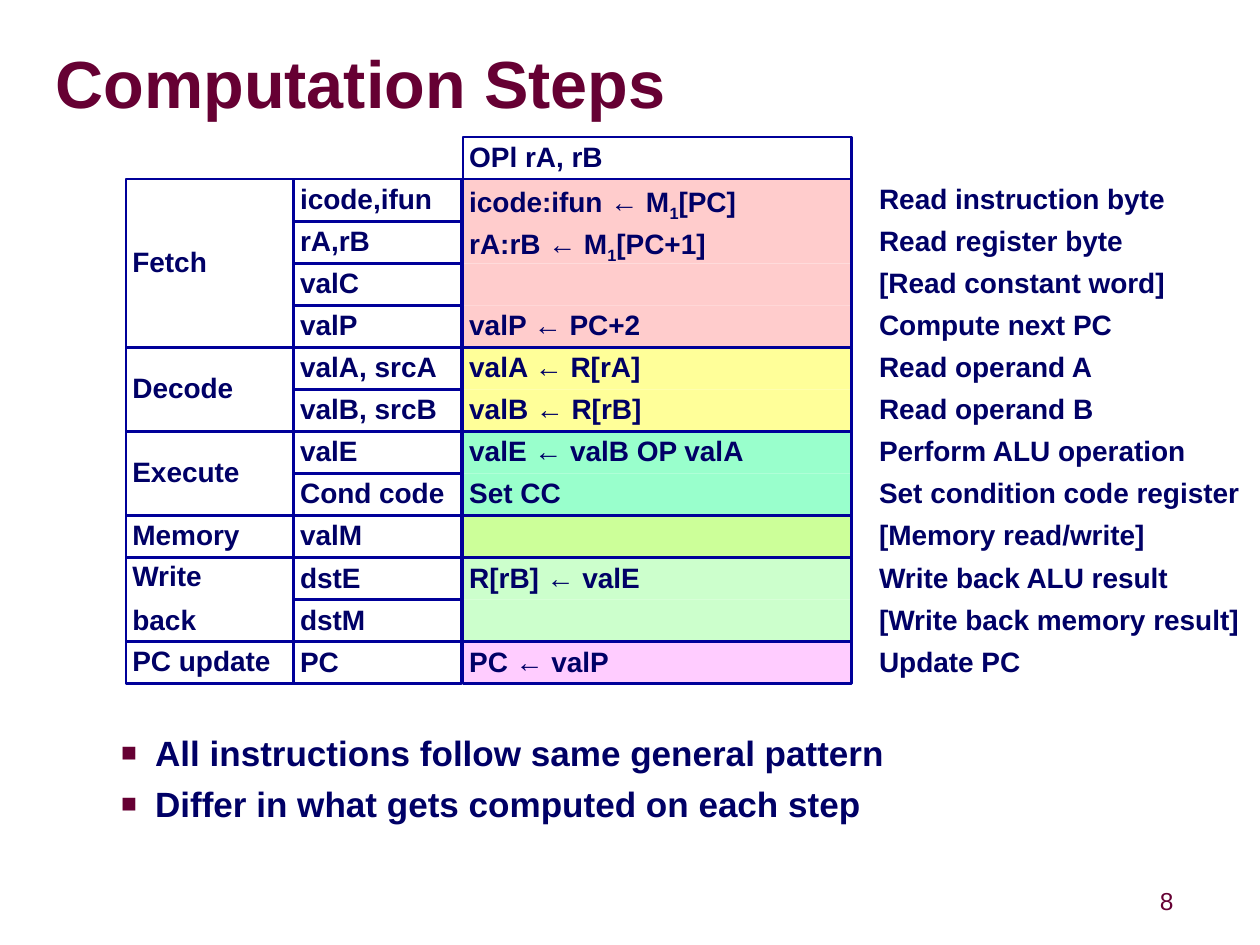
"""Build the slide that lists the computation steps of an OPl instruction."""
from lxml import etree
from pptx import Presentation
from pptx.dml.color import RGBColor
from pptx.enum.shapes import MSO_SHAPE
from pptx.enum.text import MSO_ANCHOR, MSO_AUTO_SIZE, PP_ALIGN
from pptx.oxml.ns import qn
from pptx.util import Inches, Pt

RECTANGLE = MSO_SHAPE.RECTANGLE
TOP, MIDDLE = MSO_ANCHOR.TOP, MSO_ANCHOR.MIDDLE
LEFT, CENTER = PP_ALIGN.LEFT, PP_ALIGN.CENTER
NO_AUTOFIT = MSO_AUTO_SIZE.NONE

THEME = {
    "maroon": "660033", "navy": "000066", "border": "000099", "white": "FFFFFF",
    "fetch": "FFCCCC", "decode": "FFFF99", "execute": "99FFCC",
    "memory": "CCFF99", "write": "CCFFCC", "update": "FFCCFF",
    "title": {"color": "maroon", "inset": 0, "font": {"size": Pt(38), "bold": True},
              "para": {"alignment": LEFT, "line_spacing": 0.87}},
    "list": {"color": "navy", "inset": 0.05, "font": {"size": Pt(20), "bold": True},
             "para": {"alignment": LEFT, "level": 1, "space_before": Pt(5)}},
    "cell": {"color": "navy", "inset": 0.05, "font": {"size": Pt(16), "bold": True},
             "para": {"alignment": LEFT, "line_spacing": 0.9}},
    "number": {"color": "maroon", "inset": 0.05, "font": {"size": Pt(14), "bold": False},
               "para": {"alignment": CENTER, "line_spacing": 0.9}},
}

ROW = 1 / 3
GRID_TOP = 1.42
STAGE_LEFT, VALUE_LEFT, STEP_LEFT, NOTE_LEFT = 1, 2.33, 3.67, 6.92
LABEL_WIDTH, STEP_WIDTH = 1.33, 3.08

STAGES = [
    ("Fetch", "fetch", [
        ("icode,ifun", "icode:ifun ← M|1|[PC]", "Read instruction byte"),
        ("rA,rB", "rA:rB ← M|1|[PC+1]", "Read register byte"),
        ("valC", "", "[Read constant word]"),
        ("valP", "valP ← PC+2", "Compute next PC")]),
    ("Decode", "decode", [
        ("valA, srcA", "valA ← R[rA]", "Read operand A"),
        ("valB, srcB", "valB ← R[rB]", "Read operand B")]),
    ("Execute", "execute", [
        ("valE", "valE ← valB OP valA", "Perform ALU operation"),
        ("Cond code", "Set CC", "Set condition code register")]),
    ("Memory", "memory", [("valM", "", "[Memory read/write]")]),
    ("Write\nback", "write", [
        ("dstE", "R[rB] ← valE", "Write back ALU result"),
        ("dstM", "", "[Write back memory result]")]),
    ("PC update", "update", [("PC", "PC ← valP", "Update PC")]),
]


def write(shape, text, style, anchor=TOP, wrap=True):
    """Fill a shape with styled paragraphs; text between bars is subscript."""
    look = THEME[style]
    frame = shape.text_frame
    inset = Inches(look["inset"])
    settings = {"word_wrap": wrap, "vertical_anchor": anchor, "auto_size": NO_AUTOFIT,
                "margin_left": inset, "margin_right": inset,
                "margin_top": inset, "margin_bottom": inset}
    for name, value in settings.items():
        setattr(frame, name, value)
    for index, line in enumerate(text.split("\n")):
        para = frame.add_paragraph() if index else frame.paragraphs[0]
        if index:
            para.space_before = Pt(8)
        for name, value in look["para"].items():
            setattr(para, name, value)
        for part, words in enumerate(line.split("|")):
            span = para.add_run()
            span.text = words
            span.font.name = "Arial"
            span.font.color.rgb = RGBColor.from_string(THEME[look["color"]])
            for name, value in look["font"].items():
                setattr(span.font, name, value)
            if part % 2:
                span.font._element.set("baseline", "-25000")


def add_cell(left, top, width, rows=1, text="", fill=None, line="border", anchor=TOP):
    """Add one rectangle of the grid, spanning a number of rows."""
    cell = page.shapes.add_shape(RECTANGLE, Inches(left), Inches(top),
                                 Inches(width), Inches(rows * ROW))
    cell.shadow.inherit = False
    cell.fill.background()
    cell.line.fill.background()
    if fill:
        cell.fill.solid()
        cell.fill.fore_color.rgb = RGBColor.from_string(THEME[fill])
    if line:
        cell.line.color.rgb = RGBColor.from_string(THEME[line])
        cell.line.width = Pt(1.5)
    if text:
        write(cell, text, "cell", anchor)


deck = Presentation()
deck.slide_width, deck.slide_height = Inches(9.99), Inches(7.49)
page = deck.slides.add_slide(deck.slide_layouts[1])
title, body = page.placeholders

places = [(title, (0.44, 0.27, 9.52, 0.85)), (body, (0.32, 5.75, 9.07, 1.28))]
for holder, place in places:
    for name, value in zip(("left", "top", "width", "height"), place):
        setattr(holder, name, Inches(value))

title.fill.solid()
title.fill.fore_color.rgb = RGBColor.from_string(THEME["white"])
title.line.color.rgb = RGBColor.from_string(THEME["white"])
title.line.width = Pt(2)
write(title, "Computation Steps", "title", MIDDLE)

write(body, "All instructions follow same general pattern\n"
            "Differ in what gets computed on each step", "list")
body.text_frame.margin_left = body.text_frame.margin_right = Inches(0.1)
for para in body.text_frame.paragraphs:
    props = para._p.get_or_add_pPr()
    props.set("marL", str(Inches(0.81)))
    props.set("indent", str(Inches(-0.27)))
    color = etree.SubElement(props, qn("a:buClr"))
    etree.SubElement(color, qn("a:srgbClr"), val=THEME["maroon"])
    etree.SubElement(props, qn("a:buSzPct"), val="75000")
    etree.SubElement(props, qn("a:buFont"), typeface="Arial")
    etree.SubElement(props, qn("a:buChar"), char="■")

add_cell(STEP_LEFT, GRID_TOP - ROW, STEP_WIDTH, text="OPl rA, rB")

stage_top = GRID_TOP
for stage, tint, steps in STAGES:
    count = len(steps)
    edge = "border" if count == 1 else None
    for index, (value, step, note) in enumerate(steps):
        top = stage_top + index * ROW
        add_cell(STEP_LEFT, top, STEP_WIDTH, text=step, fill=tint, line=edge)
        note_box = page.shapes.add_textbox(Inches(NOTE_LEFT), Inches(top),
                                           Inches(STEP_WIDTH), Inches(ROW))
        write(note_box, note, "cell")
    if count > 1:
        add_cell(STEP_LEFT, stage_top, STEP_WIDTH, count)
    add_cell(STAGE_LEFT, stage_top, LABEL_WIDTH, count, stage, anchor=MIDDLE)
    for index, (value, step, note) in enumerate(steps):
        add_cell(VALUE_LEFT, stage_top + index * ROW, LABEL_WIDTH, text=value)
    stage_top += count * ROW

number_box = page.shapes.add_textbox(Inches(9.08), Inches(7), Inches(0.34), Inches(0.31))
write(number_box, "8", "number", MIDDLE, wrap=False)

deck.save("out.pptx")
